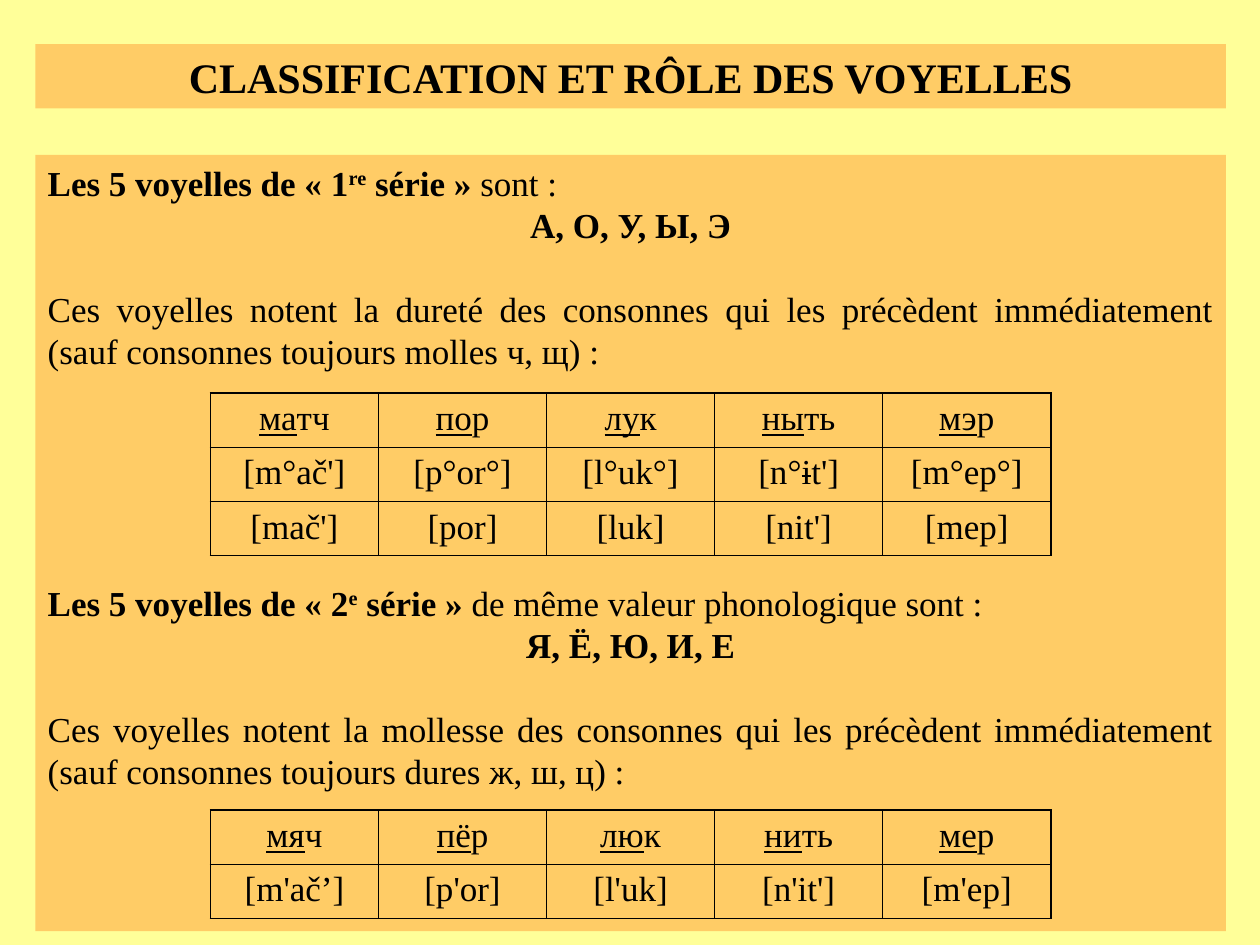
from dataclasses import dataclass

from lxml.etree import fromstring
from pptx import Presentation
from pptx.dml.color import RGBColor
from pptx.enum.shapes import MSO_SHAPE
from pptx.enum.text import MSO_ANCHOR, PP_ALIGN
from pptx.util import Inches, Pt


@dataclass(frozen=True)
class Theme:
    background: str = "FFFF99"
    panel: str = "FFCC66"
    ink: str = "000000"
    font: str = "Times New Roman"
    title_size: int = 24
    body_size: int = 20
    line_height: int = 24


THEME = Theme()
CENTER, JUSTIFY = PP_ALIGN.CENTER, PP_ALIGN.JUSTIFY
NAMESPACE = "http://schemas.openxmlformats.org/drawingml/2006/main"

PANEL_LEFT, PANEL_WIDTH = 0.28, 9.45
TITLE_TOP, TITLE_HEIGHT = 0.35, 0.51
BODY_TOP, BODY_HEIGHT = 1.23, 6.16
TABLE_LEFT, TABLE_WIDTH, ROW_HEIGHT = 1.67, 6.67, 0.43

TITLE = "CLASSIFICATION ET RÔLE DES VOYELLES"

SERIES = [
    {
        "heading": [("Les 5 voyelles de « 1", "bold"), ("re", "bold super"),
                    (" série »", "bold"), (" sont :", "")],
        "vowels": "А, О, У, Ы, Э",
        "rule": "Ces voyelles notent la dureté des consonnes qui les précèdent "
                "immédiatement (sauf consonnes toujours molles ч, щ) :",
        "words": [("ма", "тч"), ("по", "р"), ("лу", "к"), ("ны", "ть"), ("мэ", "р")],
        "sounds": [
            ["[m°ač']", "[p°or°]", "[l°uk°]",
             [("[n°", ""), ("i", "strike"), ("t']", "")], "[m°ep°]"],
            ["[mač']", "[por]", "[luk]", "[nit']", "[mep]"],
        ],
        "table_top": 3.12,
        "lines_before": 0,
    },
    {
        "heading": [("Les 5 voyelles de « 2", "bold"), ("e", "bold super"),
                    (" série »", "bold"), (" de même valeur phonologique sont :", "")],
        "vowels": "Я, Ё, Ю, И, Е",
        "rule": "Ces voyelles notent la mollesse des consonnes qui les précèdent "
                "immédiatement (sauf consonnes toujours dures ж, ш, ц) :",
        "words": [("мя", "ч"), ("пё", "р"), ("лю", "к"), ("ни", "ть"), ("ме", "р")],
        "sounds": [["[m'ač’]", "[p'or]", "[l'uk]", "[n'it']", "[m'ep]"]],
        "table_top": 6.43,
        "lines_before": 5,
    },
]


def write(para, text, size=THEME.body_size, style="", align=CENTER, lines_before=0):
    para.alignment = align
    para.space_before = Pt(lines_before * THEME.line_height)
    for words, look in [(text, style)] if isinstance(text, str) else text:
        span = para.add_run()
        span.text = words
        span.font.name = THEME.font
        span.font.size = Pt(size)
        span.font.color.rgb = RGBColor.from_string(THEME.ink)
        span.font.bold = "bold" in look
        span.font.underline = "underline" in look
        properties = span._r.get_or_add_rPr()
        if "super" in look:
            properties.set("baseline", "30000")
        if "strike" in look:
            properties.set("strike", "sngStrike")


def add_panel(page, top, height, anchor):
    box = page.shapes.add_shape(MSO_SHAPE.RECTANGLE, Inches(PANEL_LEFT), Inches(top),
                                Inches(PANEL_WIDTH), Inches(height))
    box.shadow.inherit = False
    box.fill.solid()
    box.fill.fore_color.rgb = RGBColor.from_string(THEME.panel)
    box.line.fill.background()
    box.text_frame.word_wrap = True
    box.text_frame.vertical_anchor = anchor
    return box.text_frame


def add_borders(cell):
    properties = cell._tc.get_or_add_tcPr()
    for position, side in enumerate("LRTB"):
        properties.insert(position, fromstring(
            f'<a:ln{side} xmlns:a="{NAMESPACE}" w="{Pt(1)}"><a:solidFill>'
            f'<a:srgbClr val="{THEME.ink}"/></a:solidFill></a:ln{side}>'))


def add_grid(page, top, rows):
    columns = len(rows[0])
    table = page.shapes.add_table(
        len(rows), columns, Inches(TABLE_LEFT), Inches(top),
        Inches(TABLE_WIDTH), Inches(ROW_HEIGHT * len(rows))).table
    table.first_row = table.horz_banding = False
    for row, texts in enumerate(rows):
        for column, text in enumerate(texts):
            cell = table.cell(row, column)
            cell.fill.background()
            add_borders(cell)
            write(cell.text_frame.paragraphs[0], text)


def main():
    """Build the slide on the two series of Russian vowels."""
    deck = Presentation()
    deck.slide_width, deck.slide_height = Inches(10), Inches(7.5)
    page = deck.slides.add_slide(deck.slide_layouts[6])
    page.background.fill.solid()
    page.background.fill.fore_color.rgb = RGBColor.from_string(THEME.background)

    title = add_panel(page, TITLE_TOP, TITLE_HEIGHT, MSO_ANCHOR.MIDDLE)
    write(title.paragraphs[0], TITLE, size=THEME.title_size, style="bold")

    body = add_panel(page, BODY_TOP, BODY_HEIGHT, MSO_ANCHOR.TOP)
    for index, series in enumerate(SERIES):
        heading = body.add_paragraph() if index else body.paragraphs[0]
        write(heading, series["heading"], align=JUSTIFY,
              lines_before=series["lines_before"])
        write(body.add_paragraph(), series["vowels"], style="bold")
        write(body.add_paragraph(), series["rule"], align=JUSTIFY, lines_before=1)
        words = [[(stem, "underline"), (ending, "")] for stem, ending in series["words"]]
        add_grid(page, series["table_top"], [words] + series["sounds"])

    deck.save("out.pptx")


if __name__ == "__main__":
    main()
